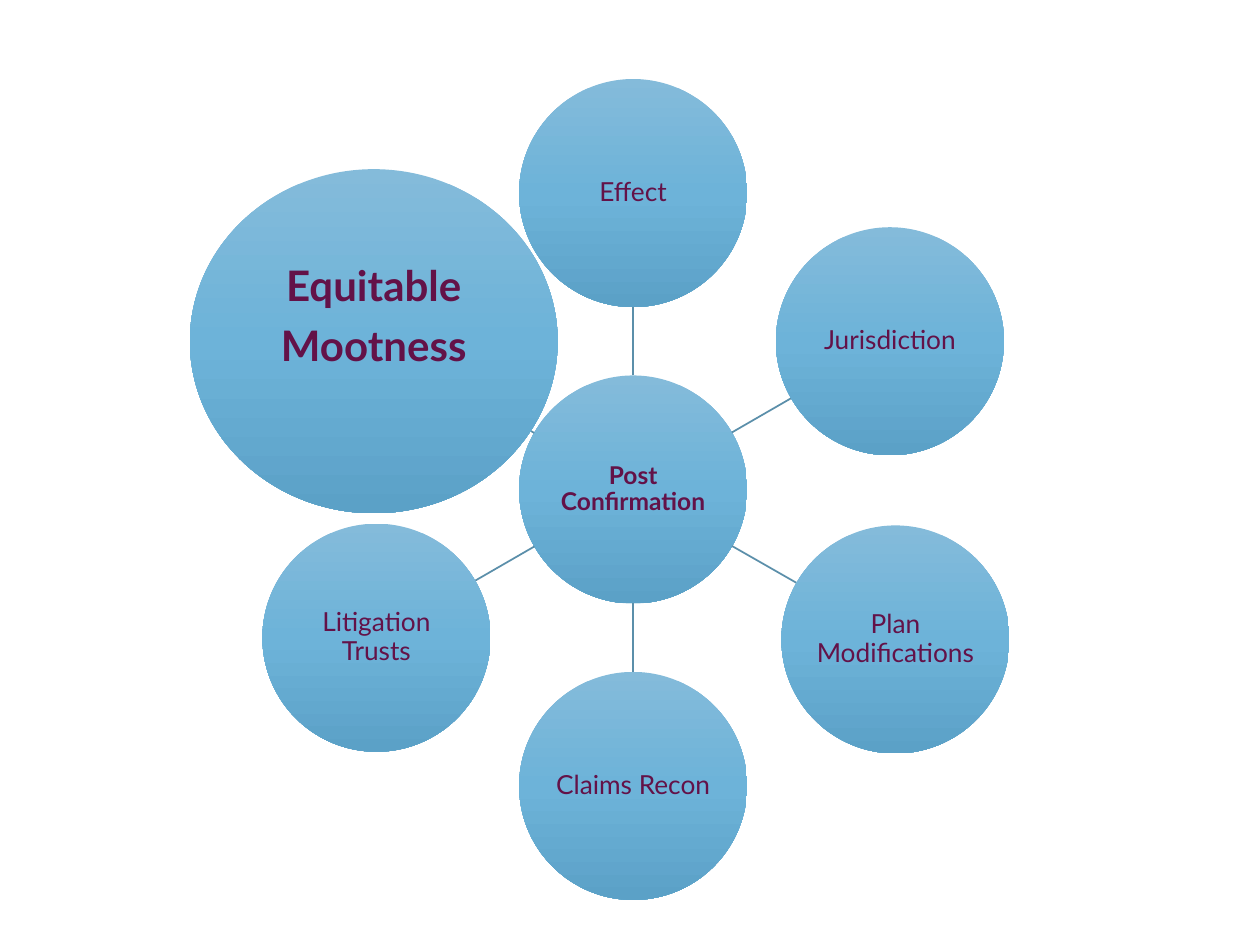
from copy import deepcopy
from math import atan2, cos, hypot, radians, sin

from pptx import Presentation
from pptx.dml.color import RGBColor
from pptx.enum.shapes import MSO_CONNECTOR, MSO_SHAPE
from pptx.enum.text import MSO_ANCHOR, PP_ALIGN
from pptx.oxml.ns import qn
from pptx.util import Pt

OVAL = MSO_SHAPE.OVAL
STRAIGHT = MSO_CONNECTOR.STRAIGHT
MIDDLE = MSO_ANCHOR.MIDDLE
CENTER = PP_ALIGN.CENTER

PLUM = RGBColor(0x63, 0x12, 0x48)
STEEL = RGBColor(0x5B, 0x8F, 0xAA)
BLUES = [
    (0, RGBColor(0x84, 0xBB, 0xDA)),
    (0.5, RGBColor(0x6D, 0xB3, 0xD9)),
    (1, RGBColor(0x5B, 0xA1, 0xC7)),
]
FONT = "Lato"

# Content: the hub, then the topics clockwise from the top
HUB = "Post Confirmation"
BASE = {"wide": 130.3, "high": 130.3, "nudge": (0, 0), "format": {"size": 15}}
TOPICS = [
    (["Effect"], {}),
    (["Jurisdiction"], {}),
    (["Plan Modifications"], {"nudge": (3.2, 1)}),
    (["Claims Recon"], {}),
    (["Litigation Trusts"], {}),
    (["Equitable", "Mootness"],
     {"wide": 210.2, "high": 196.6, "nudge": (-1.5, 0),
      "format": {"size": 24, "bold": True, "lift": 27}}),
]
MID_X, MID_Y = 361.8, 279.7
RING = 169.4


def write(shape, lines, size=15, bold=False, lift=0):
    """Centre the lines in a shape; lift adds room below them."""
    frame = shape.text_frame
    frame.word_wrap = True
    frame.vertical_anchor = MIDDLE
    frame.margin_left = frame.margin_right = frame.margin_top = Pt(1)
    frame.margin_bottom = Pt(1 + lift)
    for i, line in enumerate(lines):
        para = frame.paragraphs[0] if i == 0 else frame.add_paragraph()
        para.text = line
        para.alignment = CENTER
        para.line_spacing = 0.9
        if i < len(lines) - 1:
            para.space_after = Pt(0.35 * size)
        font = para.font
        font.name, font.size, font.bold = FONT, Pt(size), bold
        font.color.rgb = PLUM


def add_disc(slide, x, y, wide, high):
    disc = slide.shapes.add_shape(
        OVAL, Pt(x - wide / 2), Pt(y - high / 2), Pt(wide), Pt(high))
    disc.shadow.inherit = False
    disc.line.fill.background()
    disc.fill.gradient()
    disc.fill.gradient_angle = 270
    # A new gradient has two stops; this one needs a third
    stops = disc._element.spPr.find(".//" + qn("a:gsLst"))
    stops.append(deepcopy(stops[-1]))
    for stop, (place, color) in zip(disc.fill.gradient_stops, BLUES):
        stop.position = place
        stop.color.rgb = color
    return disc


def add_spoke(slide, x, y, wide, high):
    """Draw a line from the hub's edge to the edge of the disc at x, y."""
    turn = atan2(y - MID_Y, x - MID_X)
    reach = 1 / hypot(cos(turn) * 2 / wide, sin(turn) * 2 / high)
    start = BASE["wide"] / 2
    end = hypot(x - MID_X, y - MID_Y) - reach
    spoke = slide.shapes.add_connector(
        STRAIGHT,
        Pt(MID_X + start * cos(turn)), Pt(MID_Y + start * sin(turn)),
        Pt(MID_X + end * cos(turn)), Pt(MID_Y + end * sin(turn)))
    spoke.line.color.rgb = STEEL
    spoke.line.width = Pt(1)
    props = spoke._element.spPr
    props.append(props.makeelement(qn("a:effectLst"), {}))


def main():
    deck = Presentation()
    deck.slide_width, deck.slide_height = Pt(720), Pt(540)
    slide = deck.slides.add_slide(deck.slide_layouts[6])

    # Hub
    hub = add_disc(slide, MID_X, MID_Y, BASE["wide"], BASE["high"])
    write(hub, [HUB], size=14, bold=True)

    # Topics, evenly spaced around the hub
    for i, (lines, extra) in enumerate(TOPICS):
        topic = {**BASE, **extra}
        turn = radians(360 / len(TOPICS) * i - 90)
        dx, dy = topic["nudge"]
        x = MID_X + RING * cos(turn) + dx
        y = MID_Y + RING * sin(turn) + dy
        add_spoke(slide, x, y, topic["wide"], topic["high"])
        disc = add_disc(slide, x, y, topic["wide"], topic["high"])
        write(disc, lines, **topic["format"])

    deck.save("out.pptx")


if __name__ == "__main__":
    main()
